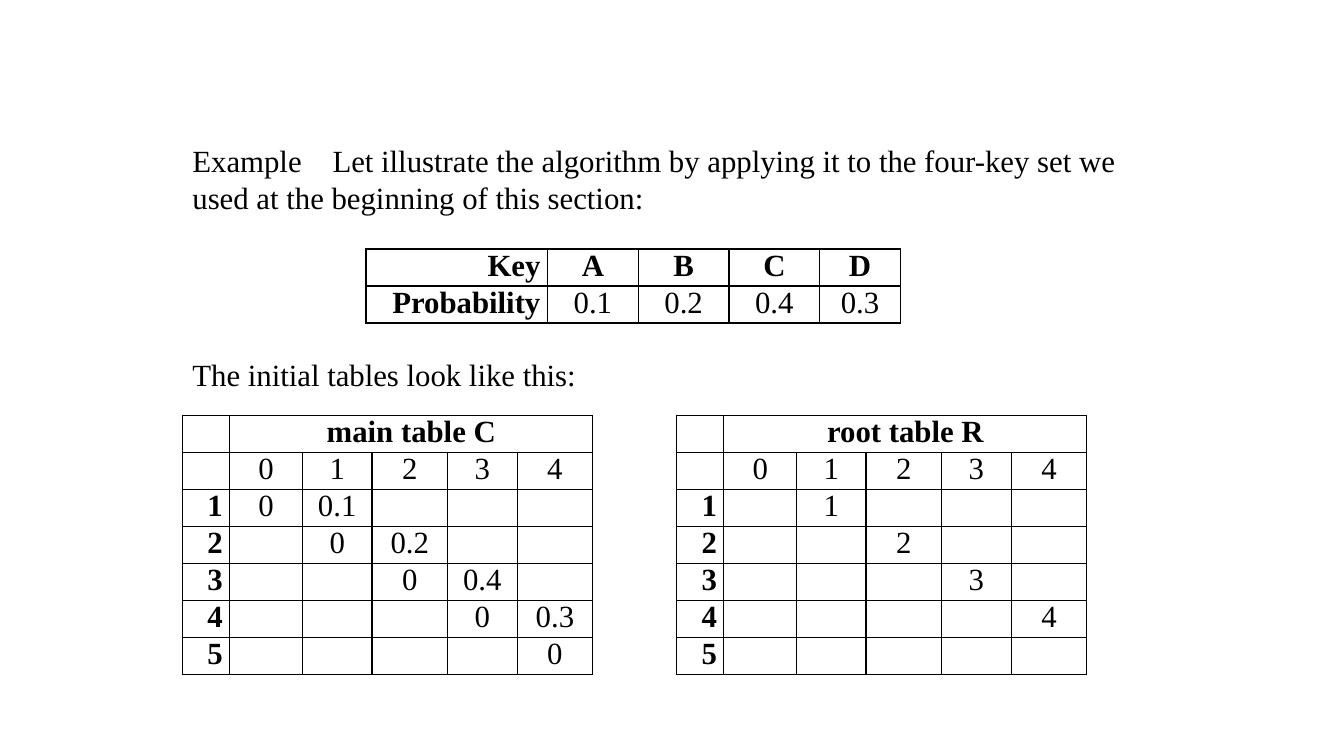
from lxml import etree
from pptx import Presentation
from pptx.dml.color import RGBColor
from pptx.enum.text import PP_ALIGN
from pptx.oxml.ns import qn
from pptx.util import Inches, Pt

LEFT, CENTER, RIGHT = PP_ALIGN.LEFT, PP_ALIGN.CENTER, PP_ALIGN.RIGHT
FONT, SIZE = "Times New Roman", 22
BLACK, WHITE = "000000", "FFFFFF"
ROW_HEIGHT = 0.367
TAB_STOP = 1.39

# Content
INTRO = ("Example\tLet illustrate the algorithm by applying it to the "
         "four-key set we used at the beginning of this section:")
CAPTION = "The initial tables look like this:"
KEY_ROWS = [
    ["Key", "A", "B", "C", "D"],
    ["Probability", "0.1", "0.2", "0.4", "0.3"],
]
PROBABILITIES = KEY_ROWS[1][1:]
KEY_COUNT = len(PROBABILITIES)
KEY_WIDTHS = [1.8, 0.9, 0.9, 0.9, 0.8]
MATRIX_WIDTHS = [0.47, 0.72, 0.69, 0.75, 0.69, 0.75]

# Entries of the initial tables, by (row, column) index
MAIN_ENTRIES = {(i, i - 1): "0" for i in range(1, KEY_COUNT + 2)}
MAIN_ENTRIES.update({(i, i): p for i, p in enumerate(PROBABILITIES, 1)})
ROOT_ENTRIES = {(i, i): str(i) for i in range(1, KEY_COUNT + 1)}
MATRICES = [
    ("main table C", 1.81, MAIN_ENTRIES),
    ("root table R", 6.71, ROOT_ENTRIES),
]


def color(hex_code):
    return RGBColor.from_string(hex_code)


def write(text_frame, text, align=LEFT, bold=False):
    text_frame.text = text
    paragraph = text_frame.paragraphs[0]
    paragraph.alignment = align
    for run in paragraph.runs:
        run.font.name, run.font.size, run.font.bold = FONT, Pt(SIZE), bold
        run.font.color.rgb = color(BLACK)
    return paragraph


def add_text(slide, text, left, top, width, height, wrap):
    text_frame = slide.shapes.add_textbox(
        Inches(left), Inches(top), Inches(width), Inches(height)).text_frame
    text_frame.word_wrap = wrap
    return write(text_frame, text)


def set_tab_stop(paragraph, position):
    properties = paragraph._p.get_or_add_pPr()
    tabs = etree.SubElement(properties, qn("a:tabLst"))
    etree.SubElement(tabs, qn("a:tab"), pos=str(Inches(position)), algn="l")


def style_cell(cell):
    properties = cell._tc.get_or_add_tcPr()
    for side in ("a:lnL", "a:lnR", "a:lnT", "a:lnB"):
        line = etree.SubElement(properties, qn(side), w=str(Pt(1)))
        fill = etree.SubElement(line, qn("a:solidFill"))
        etree.SubElement(fill, qn("a:srgbClr"), val=BLACK)
    cell.fill.solid()
    cell.fill.fore_color.rgb = color(WHITE)
    cell.margin_left = cell.margin_right = Inches(0.07)
    cell.margin_top = cell.margin_bottom = 0


def add_grid(slide, rows, widths, left, top):
    """The first row and first column are bold headings."""
    table = slide.shapes.add_table(
        len(rows), len(widths), Inches(left), Inches(top),
        Inches(sum(widths)), Inches(ROW_HEIGHT * len(rows))).table
    table.first_row = table.horz_banding = False
    for column, width in zip(table.columns, widths):
        column.width = Inches(width)
    for r, row in enumerate(rows):
        table.rows[r].height = Inches(ROW_HEIGHT)
        for c, text in enumerate(row):
            cell = table.cell(r, c)
            style_cell(cell)
            if text:
                write(cell.text_frame, text, CENTER if c else RIGHT,
                      bold=r == 0 or c == 0)
    return table


presentation = Presentation()
presentation.slide_width, presentation.slide_height = Inches(13.33), Inches(7.5)
slide = presentation.slides.add_slide(presentation.slide_layouts[6])

# Introduction and key probabilities
introduction = add_text(slide, INTRO, 1.81, 1.36, 9.82, 0.84, True)
set_tab_stop(introduction, TAB_STOP)
add_grid(slide, KEY_ROWS, KEY_WIDTHS, 3.63, 2.47)

# Initial main and root tables
add_text(slide, CAPTION, 1.81, 3.48, 4.05, 0.47, False)
indexes = range(KEY_COUNT + 1)
for title, left, entries in MATRICES:
    rows = [["", title] + [""] * KEY_COUNT, [""] + [str(j) for j in indexes]]
    rows += [[str(i)] + [entries.get((i, j), "") for j in indexes]
             for i in range(1, KEY_COUNT + 2)]
    table = add_grid(slide, rows, MATRIX_WIDTHS, left, 4.12)
    table.cell(0, 1).merge(table.cell(0, KEY_COUNT + 1))

presentation.save("out.pptx")
